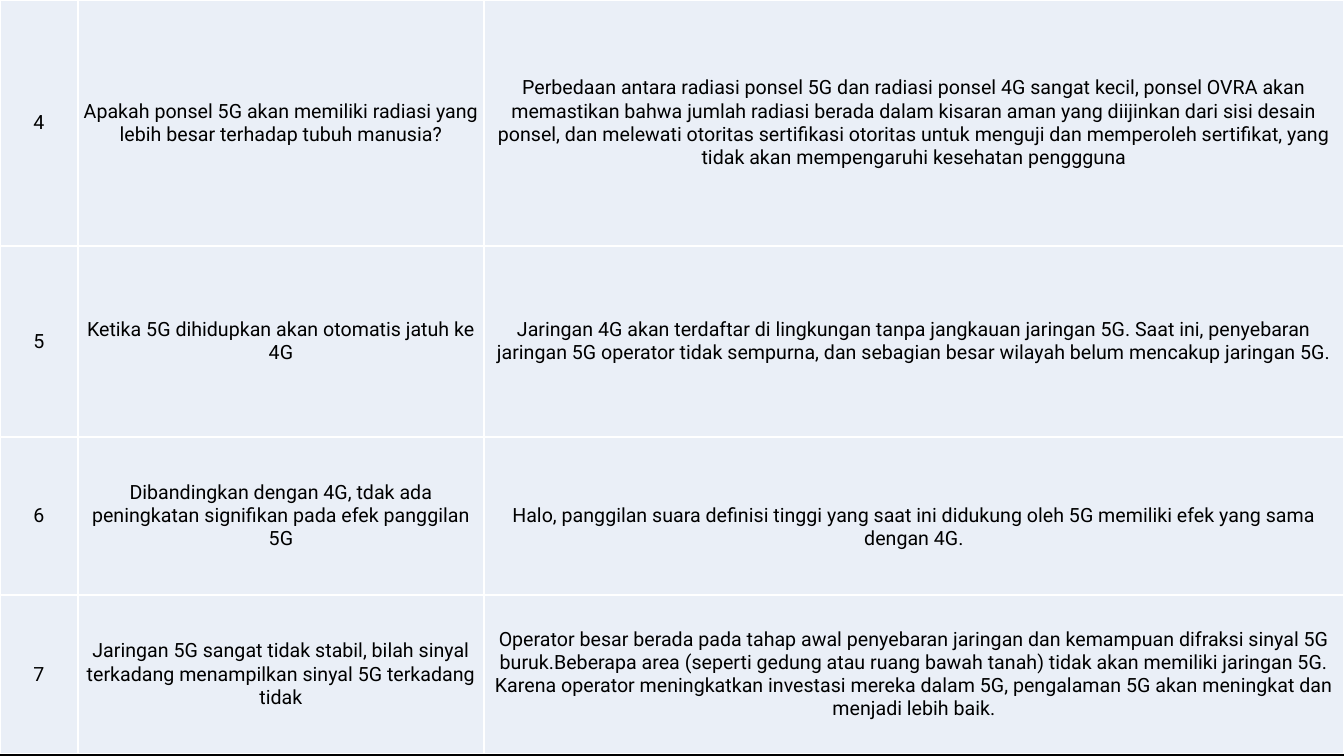
from lxml import etree
from pptx import Presentation
from pptx.dml.color import RGBColor
from pptx.enum.text import MSO_ANCHOR, PP_ALIGN
from pptx.oxml.ns import qn
from pptx.util import Pt

FAQ = [
    ("4", "Apakah ponsel 5G akan memiliki radiasi yang lebih besar terhadap tubuh manusia?",
     "Perbedaan antara radiasi ponsel 5G dan radiasi ponsel 4G sangat kecil, ponsel OVRA akan "
     "memastikan bahwa jumlah radiasi berada dalam kisaran aman yang diijinkan dari sisi desain "
     "ponsel, dan melewati otoritas sertifikasi otoritas untuk menguji dan memperoleh sertifikat, "
     "yang tidak akan mempengaruhi kesehatan penggguna"),
    ("5", "Ketika 5G dihidupkan akan otomatis jatuh ke 4G",
     "Jaringan 4G akan terdaftar di lingkungan tanpa jangkauan jaringan 5G. Saat ini, penyebaran "
     "jaringan 5G operator tidak sempurna, dan sebagian besar wilayah belum mencakup jaringan 5G."),
    ("6", "Dibandingkan dengan 4G, tdak ada peningkatan signifikan pada efek panggilan 5G",
     "Halo, panggilan suara definisi tinggi yang saat ini didukung oleh 5G memiliki efek yang sama "
     "dengan 4G."),
    ("7", "Jaringan 5G sangat tidak stabil, bilah sinyal terkadang menampilkan sinyal 5G terkadang "
     "tidak",
     "Operator besar berada pada tahap awal penyebaran jaringan dan kemampuan difraksi sinyal 5G "
     "buruk.Beberapa area (seperti gedung atau ruang bawah tanah) tidak akan memiliki jaringan 5G. "
     "Karena operator meningkatkan investasi mereka dalam 5G, pengalaman 5G akan meningkat dan "
     "menjadi lebih baik."),
]
COL_WIDTHS = [78, 406, 860]
ROW_HEIGHTS = [246, 191, 158, 159]
SLIDE_W, SLIDE_H = 1344, 756
LOWERED = {(2, 2): 23}  # (row, column): top margin

BLACK = RGBColor(0x00, 0x00, 0x00)
PALE_BLUE = RGBColor(0xEA, 0xEF, 0xF7)
WHITE = RGBColor(0xFF, 0xFF, 0xFF)
FONT, SIZE = "Roboto", Pt(14)
CENTER, MIDDLE = PP_ALIGN.CENTER, MSO_ANCHOR.MIDDLE
EMU_PER_PX = 914400 / 100.8


def px(n):
    return round(n * EMU_PER_PX)


def add_borders(cell):
    """Draw a white 1 pt line on all four sides, placed before the cell fill."""
    tcPr = cell._tc.get_or_add_tcPr()
    for i, side in enumerate(("lnL", "lnR", "lnT", "lnB")):
        ln = etree.Element(qn("a:" + side), w=str(Pt(1)))
        fill = etree.SubElement(ln, qn("a:solidFill"))
        etree.SubElement(fill, qn("a:srgbClr"), val=str(WHITE))
        tcPr.insert(i, ln)


def fill_cell(cell, text, top):
    cell.fill.solid()
    cell.fill.fore_color.rgb = PALE_BLUE
    add_borders(cell)
    cell.vertical_anchor = MIDDLE
    cell.margin_left = cell.margin_right = cell.margin_bottom = 0
    cell.margin_top = px(top)
    p = cell.text_frame.paragraphs[0]
    p.alignment = CENTER
    r = p.add_run()
    r.text = text
    r.font.name = FONT
    r.font.size = SIZE
    r.font.color.rgb = BLACK


def main():
    prs = Presentation()
    prs.slide_width, prs.slide_height = px(SLIDE_W), px(SLIDE_H)
    s = prs.slides.add_slide(prs.slide_layouts[6])
    s.background.fill.solid()
    s.background.fill.fore_color.rgb = BLACK

    table = s.shapes.add_table(len(FAQ), len(COL_WIDTHS), 0, 0,
                               px(sum(COL_WIDTHS)), px(sum(ROW_HEIGHTS))).table
    table.first_row = table.horz_banding = False
    for column, width in zip(table.columns, COL_WIDTHS):
        column.width = px(width)
    for i, (row, height) in enumerate(zip(table.rows, ROW_HEIGHTS)):
        row.height = px(height)
        for j, text in enumerate(FAQ[i]):
            fill_cell(table.cell(i, j), text, LOWERED.get((i, j), 0))
    prs.save("out.pptx")


if __name__ == "__main__":
    main()
